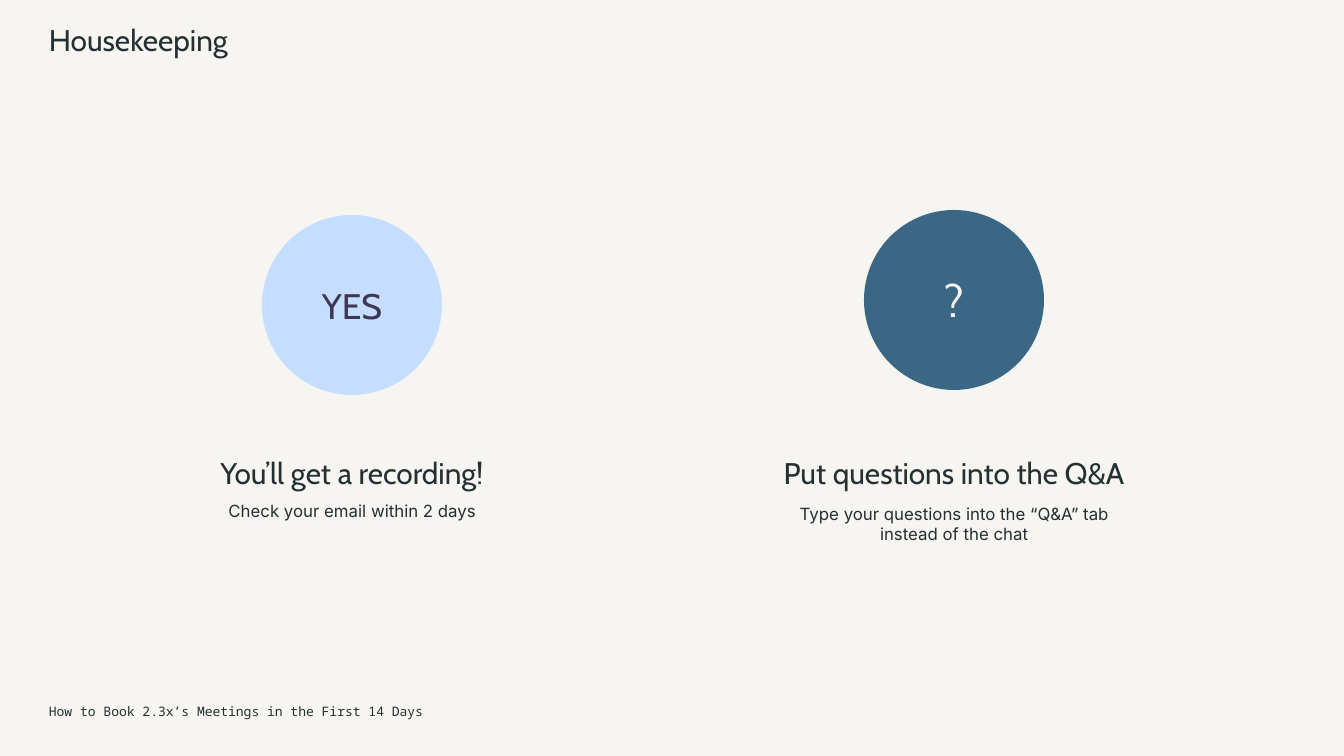
import pptx
import pptx.dml.color
import pptx.enum.shapes
import pptx.enum.text
import pptx.util

RGBColor = pptx.dml.color.RGBColor
CENTER = pptx.enum.text.PP_ALIGN.CENTER
LEFT = pptx.enum.text.PP_ALIGN.LEFT
TOP = pptx.enum.text.MSO_ANCHOR.TOP
MIDDLE = pptx.enum.text.MSO_ANCHOR.MIDDLE

PAPER = RGBColor(0xF7, 0xF5, 0xF2)
INK = RGBColor(0x24, 0x30, 0x31)
SKY = RGBColor(0xC5, 0xDD, 0xFF)
PLUM = RGBColor(0x3F, 0x36, 0x53)
TEAL = RGBColor(0x3A, 0x67, 0x83)

PX_PER_INCH = 134.4
INSET = 13
CIRCLE = 180
HEADING_WIDTH = 426
NOTE_WIDTH = 368


def px(length):
    """Turn whole pixels into EMU."""
    return pptx.util.Inches(length / PX_PER_INCH)


def write(frame, text, size, font, color, align, anchor):
    """Fill a text frame with one styled paragraph."""
    frame.word_wrap = True
    frame.vertical_anchor = anchor
    frame.margin_left = frame.margin_right = px(INSET)
    frame.margin_top = frame.margin_bottom = px(INSET)
    line = frame.paragraphs[0]
    line.text = text
    line.alignment = align
    line.font.size = pptx.util.Pt(size)
    line.font.name = font
    line.font.color.rgb = color
    return line


def add_text(slide, box, text, size, font, align=LEFT):
    """Add a wrapped text box in the ink colour."""
    label = slide.shapes.add_textbox(*map(px, box))
    return write(label.text_frame, text, size, font, INK, align, TOP)


def add_badge(slide, center, top, fill, text, size, color):
    """Add a filled circle with a centred label."""
    badge = slide.shapes.add_shape(
        pptx.enum.shapes.MSO_SHAPE.OVAL,
        px(center - CIRCLE // 2), px(top), px(CIRCLE), px(CIRCLE))
    badge.shadow.inherit = False
    badge.fill.solid()
    badge.fill.fore_color.rgb = fill
    badge.line.fill.background()
    write(badge.text_frame, text, size, "Cabin", color, CENTER, MIDDLE)


def add_tip(slide, center, heading, note):
    """Add a heading and its note, centred on a column."""
    add_text(slide, (center - HEADING_WIDTH // 2, 442, HEADING_WIDTH, 39),
             heading, 16, "Cabin", CENTER)
    add_text(slide, (center - NOTE_WIDTH // 2, 491, NOTE_WIDTH, 65),
             note, 9, "Inter", CENTER)


def main():
    """Build the housekeeping slide."""
    deck = pptx.Presentation()
    deck.slide_width, deck.slide_height = px(1344), px(756)
    slide = deck.slides.add_slide(deck.slide_layouts[6])
    slide.background.fill.solid()
    slide.background.fill.fore_color.rgb = PAPER

    title = add_text(slide, (36, 13, 888, 117), "Housekeeping", 16, "Cabin")
    title.line_spacing = 0.9
    add_text(slide, (36, 696, 452, 31),
             "How to Book 2.3x’s Meetings in the First 14 Days",
             7, "Noto Sans Mono")

    recording, questions = 352, 954
    add_badge(slide, recording, 215, SKY, "YES", 19, PLUM)
    add_badge(slide, questions, 210, TEAL, "?", 24, PAPER)
    add_tip(slide, recording, "You’ll get a recording!",
            "Check your email within 2 days")
    add_tip(slide, questions, "Put questions into the Q&A",
            "Type your questions into the “Q&A” tab instead of the chat")
    deck.save("out.pptx")


if __name__ == "__main__":
    main()
